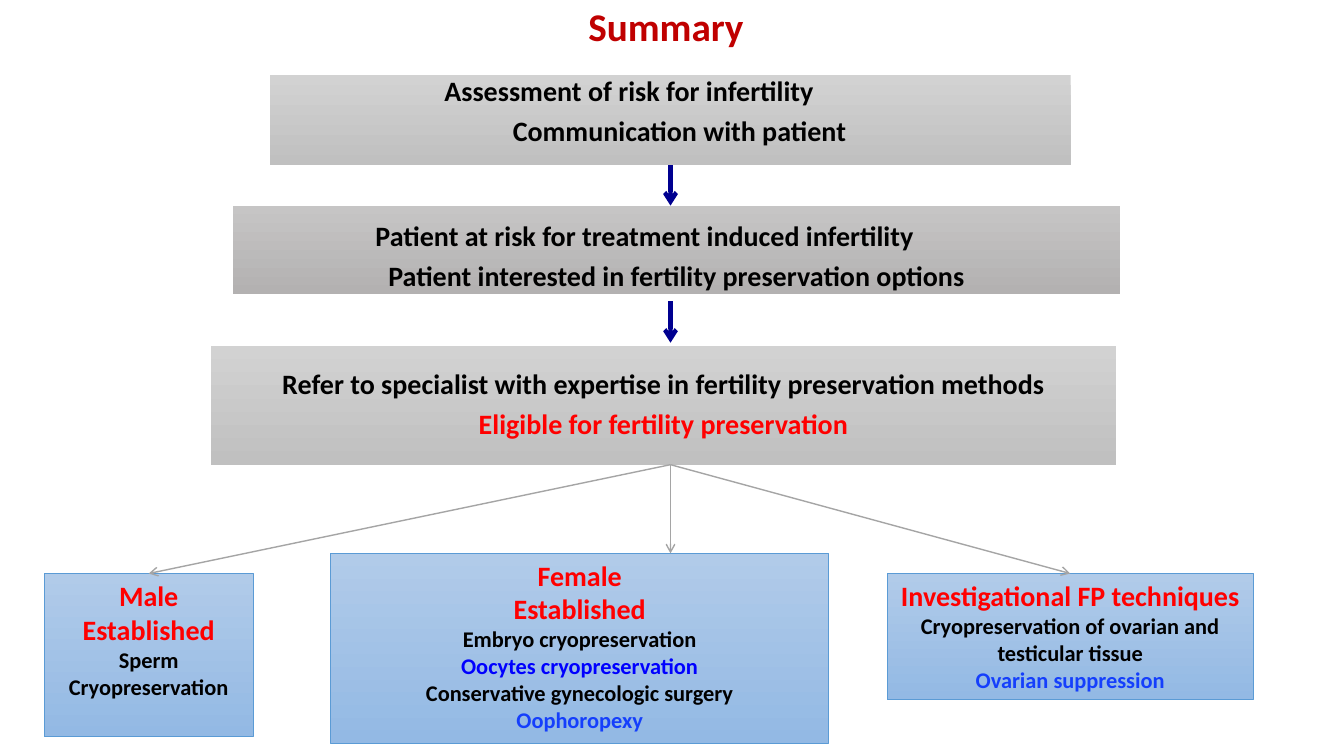
from pptx import Presentation
from pptx.dml.color import RGBColor
from pptx.enum.shapes import MSO_CONNECTOR, MSO_SHAPE
from pptx.enum.text import MSO_ANCHOR, PP_ALIGN
from pptx.oxml.ns import qn
from pptx.oxml.xmlchemy import OxmlElement
from pptx.util import Inches, Pt

COLORS = {
    "title": "C00000", "black": "000000", "red": "FF0000",
    "blue": "0000FF", "royal": "153FFC", "navy": "000090",
    "gray": "A5A5A5", "card_line": "5B9BD5",
}
GRADIENTS = {
    "light": ("D2D2D2", "C0C0C0"),
    "dark": ("C6C5C5", "B3B1B1"),
    "card": ("B1CBE9", "93B9E4"),
}
AXIS = 6.65

BANDS = [
    {"box": (2.68, 0.74, 7.94, 0.9), "gradient": "light",
     "margins": {"margin_top": 0.12, "margin_bottom": 0.27, "margin_right": 0.92},
     "lines": [("Assessment of risk for infertility", "black", 0),
               ("Communication with patient", "black", 1)]},
    {"box": (2.31, 2.04, 8.8, 0.88), "gradient": "dark",
     "margins": {"margin_top": 0.23, "margin_bottom": 0.09, "margin_right": 0.73},
     "lines": [("Patient at risk for treatment induced infertility", "black", 0),
               ("Patient interested in fertility preservation options", "black", 0.63)]},
    {"box": (2.09, 3.43, 8.98, 1.18), "gradient": "light",
     "margins": {"margin_top": 0.23, "margin_bottom": 0.23, "margin_right": 0.1},
     "lines": [("Refer to specialist with expertise in fertility preservation methods", "black", 0),
               ("Eligible for fertility preservation", "red", 0)]},
]
CARDS = [
    {"box": (0.44, 5.69, 2.07, 1.62),
     "heading": ["Male", "Established"],
     "items": [("Sperm Cryopreservation", "black")]},
    {"box": (3.28, 5.49, 4.94, 1.88),
     "heading": ["Female", "Established"],
     "items": [("Embryo cryopreservation", "black"),
               ("Oocytes cryopreservation", "blue"),
               ("Conservative gynecologic surgery", "black"),
               ("Oophoropexy", "royal")]},
    {"box": (8.8, 5.69, 3.63, 1.25),
     "heading": ["Investigational FP techniques"],
     "items": [("Cryopreservation of ovarian and testicular tissue", "black"),
               ("Ovarian suppression", "royal")]},
]


def set_all(target, values):
    for name, value in values.items():
        setattr(target, name, value)


def rgb(name):
    return RGBColor.from_string(COLORS[name])


def write_line(frame, index, text, color, size):
    paragraph = frame.paragraphs[0] if index == 0 else frame.add_paragraph()
    paragraph.text = text
    paragraph.alignment = PP_ALIGN.CENTER
    set_all(paragraph.font, {"name": "Calibri", "size": Pt(size), "bold": True})
    paragraph.font.color.rgb = rgb(color)
    return paragraph


def add_panel(slide, box, gradient, anchor):
    shape = slide.shapes.add_shape(MSO_SHAPE.RECTANGLE, *map(Inches, box))
    shape.shadow.inherit = False
    shape.fill.gradient()
    shape.fill.gradient_angle = 270
    for stop, color in zip(shape.fill.gradient_stops, GRADIENTS[gradient]):
        stop.color.rgb = RGBColor.from_string(color)
    set_all(shape.text_frame, {"word_wrap": True, "vertical_anchor": anchor})
    return shape


def add_title(slide, box):
    title = slide.shapes.title
    set_all(title, dict(zip(("left", "top", "width", "height"), map(Inches, box))))
    set_all(title.text_frame, {"vertical_anchor": MSO_ANCHOR.TOP, "margin_top": Inches(0.02)})
    write_line(title.text_frame, 0, "Summary", "title", 28)


def add_band(slide, box, gradient, margins, lines):
    band = add_panel(slide, box, gradient, MSO_ANCHOR.MIDDLE)
    band.line.fill.background()
    set_all(band.text_frame, {name: Inches(value) for name, value in margins.items()})
    for index, (text, color, indent) in enumerate(lines):
        paragraph = write_line(band.text_frame, index, text, color, 20)
        set_all(paragraph, {"line_spacing": 0.9, "space_after": Pt(7)})
        if indent:
            paragraph._p.get_or_add_pPr().set("marL", str(Inches(indent)))
    return band


def add_card(slide, box, heading, items):
    card = add_panel(slide, box, "card", MSO_ANCHOR.TOP)
    card.line.color.rgb = rgb("card_line")
    card.line.width = Pt(0.5)
    lines = [(text, "red", 20) for text in heading] + [(*item, 16) for item in items]
    for index, line in enumerate(lines):
        write_line(card.text_frame, index, *line)
    return card


def add_arrow(slide, start, end, color, width):
    points = map(Inches, (*start, *end))
    arrow = slide.shapes.add_connector(MSO_CONNECTOR.STRAIGHT, *points)
    arrow.line.color.rgb = rgb(color)
    arrow.line.width = Pt(width)
    properties = arrow._element.spPr
    head = OxmlElement("a:tailEnd")
    head.set("type", "arrow")
    properties.find(qn("a:ln")).append(head)
    properties.append(OxmlElement("a:effectLst"))
    return arrow


def add_flow(slide):
    bands = [add_band(slide, **band) for band in BANDS]
    cards = [add_card(slide, **card) for card in CARDS]
    first = add_arrow(slide, (AXIS, 1.64), (AXIS, 2.04), "navy", 3)
    first.begin_connect(bands[0], 2)
    add_arrow(slide, (AXIS, 2.99), (AXIS, 3.4), "navy", 3)
    male, female, investigational = cards
    for card, x, y in ((male, 1.48, 5.69), (female, AXIS, 5.49), (investigational, 10.61, 5.69)):
        arrow = add_arrow(slide, (AXIS, 4.61), (x, y), "gray", 1)
        if card is not female:
            arrow.end_connect(card, 0)


def main():
    presentation = Presentation()
    set_all(presentation, {"slide_width": Inches(13.33), "slide_height": Inches(7.5)})
    slide = presentation.slides.add_slide(presentation.slide_layouts[5])
    add_title(slide, (2.9, 0, 7.41, 0.54))
    add_flow(slide)
    presentation.save("out.pptx")


if __name__ == "__main__":
    main()
